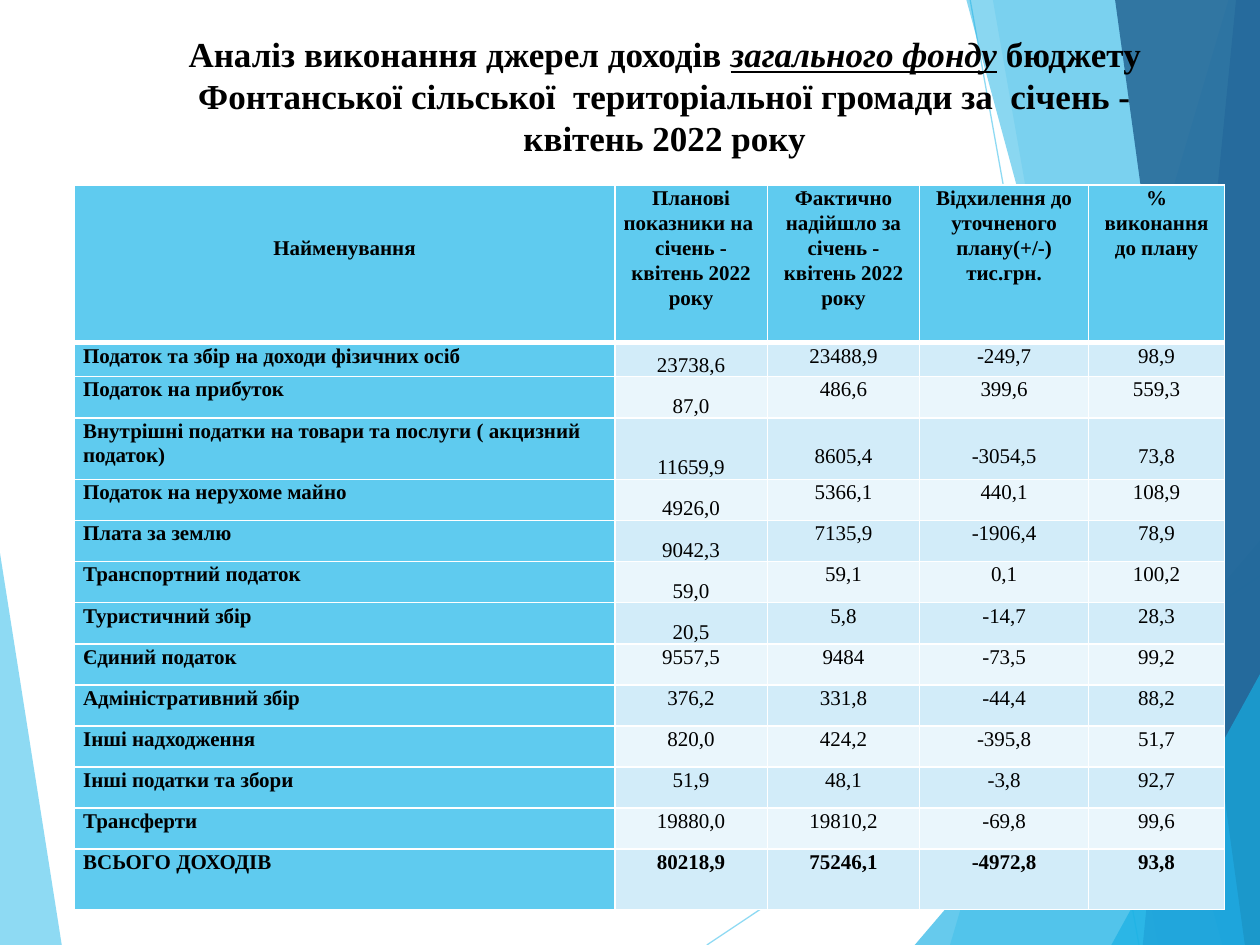
from lxml.etree import SubElement
from pptx import Presentation
from pptx.dml.color import RGBColor
from pptx.enum.shapes import MSO_CONNECTOR
from pptx.enum.text import MSO_ANCHOR, PP_ALIGN
from pptx.oxml.ns import qn
from pptx.util import Inches, Pt

SKY = RGBColor(0x5F, 0xCB, 0xEF)
AZURE = RGBColor(0x17, 0xB0, 0xE4)
BLUE = RGBColor(0x2E, 0x83, 0xC3)
NAVY = RGBColor(0x22, 0x62, 0x92)
BAND_DARK = RGBColor(0xD2, 0xEC, 0xF9)
BAND_LIGHT = RGBColor(0xEA, 0xF6, 0xFC)
WHITE = RGBColor(0xFF, 0xFF, 0xFF)
BLACK = RGBColor(0, 0, 0)
FONT = "Times New Roman"


def set_opacity(shape, percent):
    color = next(shape._element.spPr.iter(qn("a:srgbClr")))
    SubElement(color, qn("a:alpha"), val=str(percent * 1000))


def add_run(paragraph, text, size, bold):
    run = paragraph.add_run()
    run.text = text
    run.font.name = FONT
    run.font.size = Pt(size)
    run.font.bold = bold
    run.font.color.rgb = BLACK
    return run


presentation = Presentation()
presentation.slide_width = Inches(10)
presentation.slide_height = Inches(7.5)
slide = presentation.slides.add_slide(presentation.slide_layouts[6])

facets = [
    ([(0, 4.39), (0.49, 7.5), (0, 7.5)], SKY, 70),
    ([(9.75, 0), (7.54, 7.5), (10, 7.5), (10, 0)], SKY, 36),
    ([(7.88, 0), (9.19, 7.5), (10, 7.5), (10, 0)], SKY, 20),
    ([(7.26, 7.5), (10, 4.29), (10, 7.5)], AZURE, 66),
    ([(7.67, 0), (9.7, 7.5), (10, 7.5), (10, 0)], AZURE, 50),
    ([(9.81, 0), (9.07, 7.5), (10, 7.5), (10, 0)], BLUE, 70),
    ([(8.85, 0), (9.88, 7.5), (10, 7.5), (10, 0)], NAVY, 82),
    ([(8.82, 7.5), (10, 5.35), (10, 7.5)], AZURE, 66),
]
rays = [(5.61, 7.5, 10, 4.57), (7.7, 0, 9.04, 7.5)]

for index, (points, color, opacity) in enumerate(facets):
    corners = [(Inches(x), Inches(y)) for x, y in points]
    builder = slide.shapes.build_freeform(*corners[0])
    builder.add_line_segments(corners[1:], close=True)
    facet = builder.convert_to_shape()
    facet.shadow.inherit = False
    facet.fill.solid()
    facet.fill.fore_color.rgb = color
    facet.line.fill.background()
    set_opacity(facet, opacity)
    if index == 0:
        for ray in rays:
            connector = slide.shapes.add_connector(
                MSO_CONNECTOR.STRAIGHT, *[Inches(value) for value in ray])
            connector.line.color.rgb = SKY
            connector.line.width = Pt(0.75)
            set_opacity(connector, 70)
            SubElement(connector._element.spPr, qn("a:effectLst"))

title = slide.shapes.add_textbox(Inches(0.98), Inches(0.21), Inches(8.59), Inches(0.88))
title.text_frame.word_wrap = True
paragraph = title.text_frame.paragraphs[0]
paragraph.alignment = PP_ALIGN.CENTER
add_run(paragraph, "Аналіз виконання джерел доходів ", 20, True)
emphasis = add_run(paragraph, "загального фонду", 20, True)
emphasis.font.italic = True
emphasis.font.underline = True
add_run(paragraph, " бюджету", 20, True)
paragraph.add_line_break()
add_run(paragraph, "Фонтанської сільської  територіальної громади за  січень - квітень 2022 року", 20, True)

rows = [
    ("Найменування", "Планові показники на  січень - квітень 2022 року",
     "Фактично надійшло за січень - квітень 2022 року",
     "Відхилення до уточненого плану(+/-) тис.грн.", "% виконання до плану"),
    ("Податок та збір на доходи фізичних осіб", "23738,6", "23488,9", "-249,7", "98,9"),
    ("Податок на прибуток", "87,0", "486,6", "399,6", "559,3"),
    ("Внутрішні податки на товари та послуги ( акцизний податок)",
     "11659,9", "8605,4", "-3054,5", "73,8"),
    ("Податок на нерухоме майно", "4926,0", "5366,1", "440,1", "108,9"),
    ("Плата за землю", "9042,3", "7135,9", "-1906,4", "78,9"),
    ("Транспортний податок", "59,0", "59,1", "0,1", "100,2"),
    ("Туристичний збір", "20,5", "5,8", "-14,7", "28,3"),
    ("Єдиний податок", "9557,5", "9484", "-73,5", "99,2"),
    ("Адміністративний збір", "376,2", "331,8", "-44,4", "88,2"),
    ("Інші надходження", "820,0", "424,2", "-395,8", "51,7"),
    ("Інші податки та збори", "51,9", "48,1", "-3,8", "92,7"),
    ("Трансферти", "19880,0", "19810,2", "-69,8", "99,6"),
    ("ВСЬОГО ДОХОДІВ", "80218,9", "75246,1", "-4972,8", "93,8"),
]
last_row = len(rows) - 1
excise_row = 3
table_height = 5.75
special_heights = {0: 1.25, 1: 0.27, excise_row: 0.49, last_row: 0.48}
regular_height = (table_height - sum(special_heights.values())) / (len(rows) - len(special_heights))

table = slide.shapes.add_table(len(rows), 5, Inches(0.59), Inches(1.47),
                               Inches(9.13), Inches(table_height)).table
table.first_row = False
table.horz_banding = False
for column, width in zip(table.columns, (4.29, 1.21, 1.21, 1.34, 1.08)):
    column.width = Inches(width)

for row_index, texts in enumerate(rows):
    table.rows[row_index].height = Inches(special_heights.get(row_index, regular_height))
    for column_index, text in enumerate(texts):
        cell = table.cell(row_index, column_index)
        header = row_index == 0
        label = column_index == 0
        cell.margin_left = cell.margin_right = Inches(0.07)
        cell.margin_top = cell.margin_bottom = 0
        if header and label:
            cell.margin_top = Inches(0.4)
        elif row_index == excise_row and column_index > 1:
            cell.margin_top = Inches(0.2)
        bottom_aligned = column_index == 1 and 1 <= row_index <= 7
        cell.vertical_anchor = MSO_ANCHOR.BOTTOM if bottom_aligned else MSO_ANCHOR.TOP

        paragraph = cell.text_frame.paragraphs[0]
        paragraph.alignment = PP_ALIGN.LEFT if label and not header else PP_ALIGN.CENTER
        paragraph.line_spacing = 1.07
        add_run(paragraph, text, 12, header or label or row_index == last_row)

        properties = cell._tc.get_or_add_tcPr()
        for side in "LRTB":
            thick = (row_index, side) in ((0, "B"), (1, "T"))
            border = SubElement(properties, qn(f"a:ln{side}"), w=str(Pt(3 if thick else 1)))
            border_fill = SubElement(border, qn("a:solidFill"))
            SubElement(border_fill, qn("a:srgbClr"), val=str(WHITE))
        cell.fill.solid()
        band = BAND_DARK if row_index % 2 else BAND_LIGHT
        cell.fill.fore_color.rgb = SKY if header or label else band

presentation.save("out.pptx")
